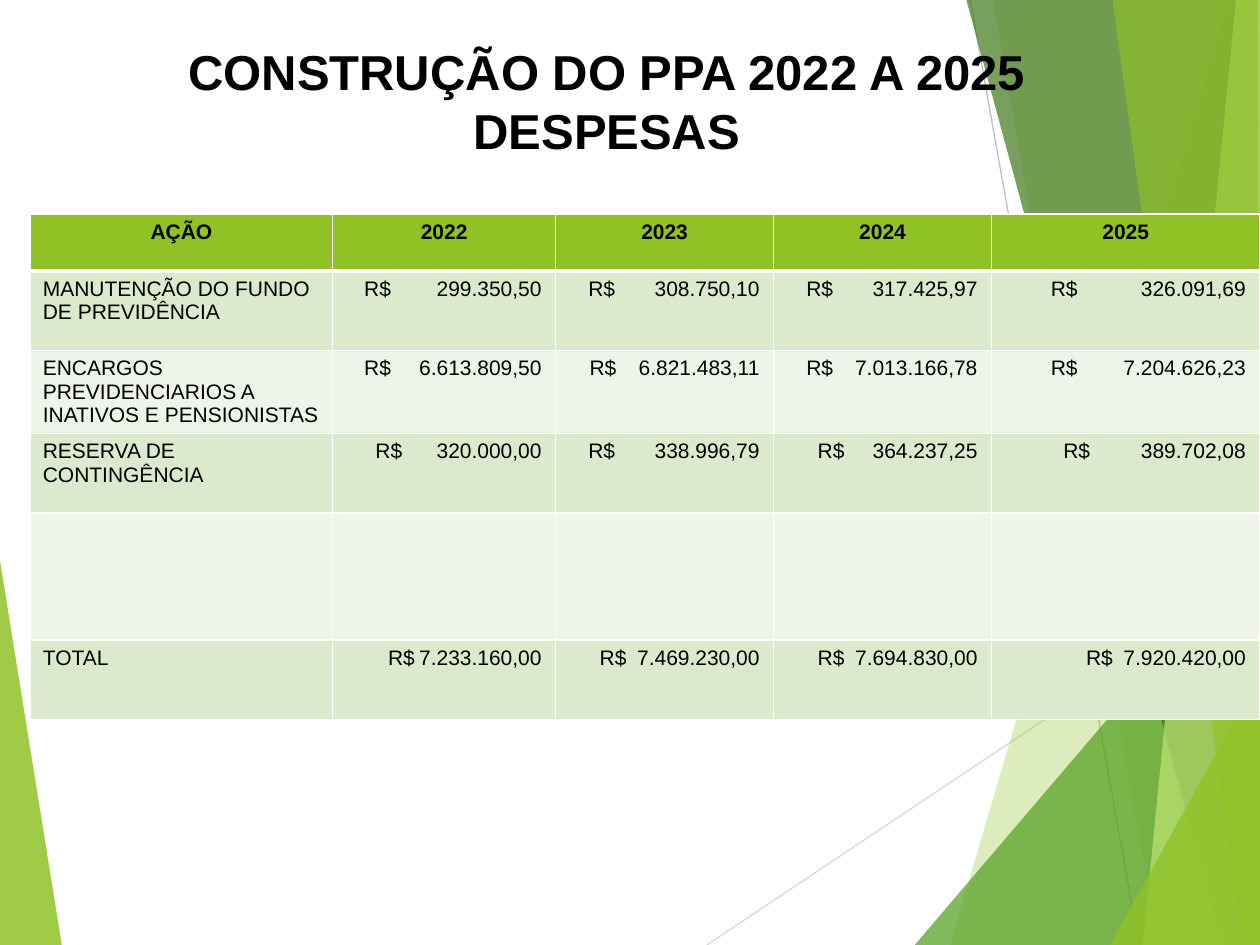
import pptx
import pptx.dml.color
import pptx.enum.shapes
import pptx.enum.text
import pptx.oxml
import pptx.oxml.ns
import pptx.util
from lxml import etree

Inches = pptx.util.Inches
Pt = pptx.util.Pt
Align = pptx.enum.text.PP_ALIGN
Anchor = pptx.enum.text.MSO_ANCHOR

# Content
TITLE = ["CONSTRUÇÃO DO PPA 2022 A 2025", "DESPESAS"]
HEADER = ["AÇÃO", "2022", "2023", "2024", "2025"]
CURRENCY = "R$"
# Action, yearly amounts, left inset of the currency sign in each year
EXPENSES = [
    ("MANUTENÇÃO DO FUNDO DE PREVIDÊNCIA",
     ["299.350,50", "308.750,10", "317.425,97", "326.091,69"], [0.25, 0.26, 0.26, 0.47]),
    ("ENCARGOS PREVIDENCIARIOS A INATIVOS E PENSIONISTAS",
     ["6.613.809,50", "6.821.483,11", "7.013.166,78", "7.204.626,23"], [0.25, 0.27, 0.26, 0.47]),
    ("RESERVA DE CONTINGÊNCIA",
     ["320.000,00", "338.996,79", "364.237,25", "389.702,08"], [0.34, 0.26, 0.35, 0.57]),
    ("", [""] * 4, [0.1] * 4),
    ("TOTAL",
     ["7.233.160,00", "7.469.230,00", "7.694.830,00", "7.920.420,00"], [0.44, 0.35, 0.35, 0.75]),
]
COLUMN_WIDTHS = [2.4, 1.77, 1.73, 1.73, 2.13]
ROW_HEIGHTS = [0.45, 0.63, 0.58, 0.63, 1.01, 0.63]
CELL_MARGIN = 0.1
HEADER_FILL, BAND_FILLS = "90C226", ["DBE9CD", "EEF4E8"]

# Background facets, back to front: corners, colour, opacity in percent
LEFT_FACET = ([(0, 4.45), (0.49, 7.5), (0, 7.5)], "90C226", 85)
RAYS = [((5.61, 7.5), (10, 4.57), "D9D9D9"), ((7.7, 0), (9.04, 7.5), "BFBFBF")]
RIGHT_FACETS = [
    ([(9.75, 0), (7.54, 7.5), (10, 7.5), (10, 0)], "90C226", 30),
    ([(7.88, 0), (9.19, 7.5), (10, 7.5), (10, 0)], "90C226", 20),
    ([(7.26, 7.5), (10, 4.29), (10, 7.5)], "54A021", 72),
    ([(7.67, 0), (9.7, 7.5), (10, 7.5), (10, 0)], "3F7819", 70),
    ([(9.81, 0), (9.07, 7.5), (10, 7.5), (10, 0)], "C0E474", 70),
    ([(8.83, 0), (9.86, 7.5), (10, 7.5), (9.98, 0)], "90C226", 65),
    ([(8.81, 7.5), (10, 5.35), (10, 7.5)], "90C226", 80),
]


def color(hex_string):
    return pptx.dml.color.RGBColor.from_string(hex_string)


def sub(parent, tag, **attributes):
    return etree.SubElement(parent, pptx.oxml.ns.qn(tag), attributes)


def add_facet(slide, corners, fill, opacity):
    points = [(Inches(x), Inches(y)) for x, y in corners]
    builder = slide.shapes.build_freeform(*points[0])
    builder.add_line_segments(points[1:], close=True)
    facet = builder.convert_to_shape()
    facet.shadow.inherit = False
    facet.line.fill.background()
    facet.fill.solid()
    facet.fill.fore_color.rgb = color(fill)
    srgb = facet.fill._xPr.find(".//" + pptx.oxml.ns.qn("a:srgbClr"))
    sub(srgb, "a:alpha", val=str(opacity * 1000))


def add_ray(slide, start, end, line_color):
    ray = slide.shapes.add_connector(
        pptx.enum.shapes.MSO_CONNECTOR.STRAIGHT, *map(Inches, start + end))
    ray.line.color.rgb = color(line_color)
    ray.line.width = Pt(0.75)
    sub(ray._element.spPr, "a:effectLst")


def add_text(paragraph, text, size, bold, align):
    paragraph.alignment = align
    run = paragraph.add_run()
    run.text = text
    run.font.name = "Arial"
    run.font.size = Pt(size)
    run.font.bold = bold
    run.font.color.rgb = color("000000")


def style_cell(cell, fill, top=1, bottom=1):
    cell.fill.solid()
    cell.fill.fore_color.rgb = color(fill)
    properties = cell._tc.get_or_add_tcPr()
    for i, (side, width) in enumerate([("L", 1), ("R", 1), ("T", top), ("B", bottom)]):
        border = sub(properties, "a:ln" + side, w=str(Pt(width)))
        sub(sub(border, "a:solidFill"), "a:srgbClr", val="FFFFFF")
        properties.insert(i, border)


def add_amount(cell, amount, inset, column_width):
    # Currency sign at the inset, amount on a right tab at the cell margin
    cell.margin_left = Inches(inset)
    paragraph = cell.text_frame.paragraphs[0]
    add_text(paragraph, CURRENCY + "\t" + amount, 12, False, Align.LEFT)
    stop = Inches(column_width - inset - CELL_MARGIN - 0.01)
    tabs = sub(paragraph._p.get_or_add_pPr(), "a:tabLst")
    sub(tabs, "a:tab", pos=str(stop), algn="r")


def add_expense_table(slide):
    table = slide.shapes.add_table(
        len(ROW_HEIGHTS), len(COLUMN_WIDTHS), Inches(0.24), Inches(1.7),
        Inches(sum(COLUMN_WIDTHS)), Inches(sum(ROW_HEIGHTS))).table
    for column, width in zip(table.columns, COLUMN_WIDTHS):
        column.width = Inches(width)
    for row, height in zip(table.rows, ROW_HEIGHTS):
        row.height = Inches(height)
    for c, heading in enumerate(HEADER):
        cell = table.cell(0, c)
        style_cell(cell, HEADER_FILL, bottom=3)
        add_text(cell.text_frame.paragraphs[0], heading, 12, True, Align.CENTER)
    for r, (action, amounts, insets) in enumerate(EXPENSES, start=1):
        for c in range(len(HEADER)):
            style_cell(table.cell(r, c), BAND_FILLS[(r - 1) % 2], top=3 if r == 1 else 1)
        if not action:
            continue
        add_text(table.cell(r, 0).text_frame.paragraphs[0], action, 12, False, Align.LEFT)
        for c, (amount, inset) in enumerate(zip(amounts, insets), start=1):
            add_amount(table.cell(r, c), amount, inset, COLUMN_WIDTHS[c])


def add_title(slide):
    frame = slide.shapes.add_textbox(
        Inches(0.59), Inches(0.3), Inches(8.45), Inches(1)).text_frame
    frame.word_wrap = True
    frame.vertical_anchor = Anchor.MIDDLE
    for i, line in enumerate(TITLE):
        paragraph = frame.add_paragraph() if i else frame.paragraphs[0]
        add_text(paragraph, line, 28, True, Align.CENTER)


def main():
    deck = pptx.Presentation()
    deck.slide_width, deck.slide_height = Inches(10), Inches(7.5)
    slide = deck.slides.add_slide(deck.slide_layouts[6])
    # Background
    add_facet(slide, *LEFT_FACET)
    for ray in RAYS:
        add_ray(slide, *ray)
    for facet in RIGHT_FACETS:
        add_facet(slide, *facet)
    # Content
    add_expense_table(slide)
    add_title(slide)
    deck.save("out.pptx")


if __name__ == "__main__":
    main()
